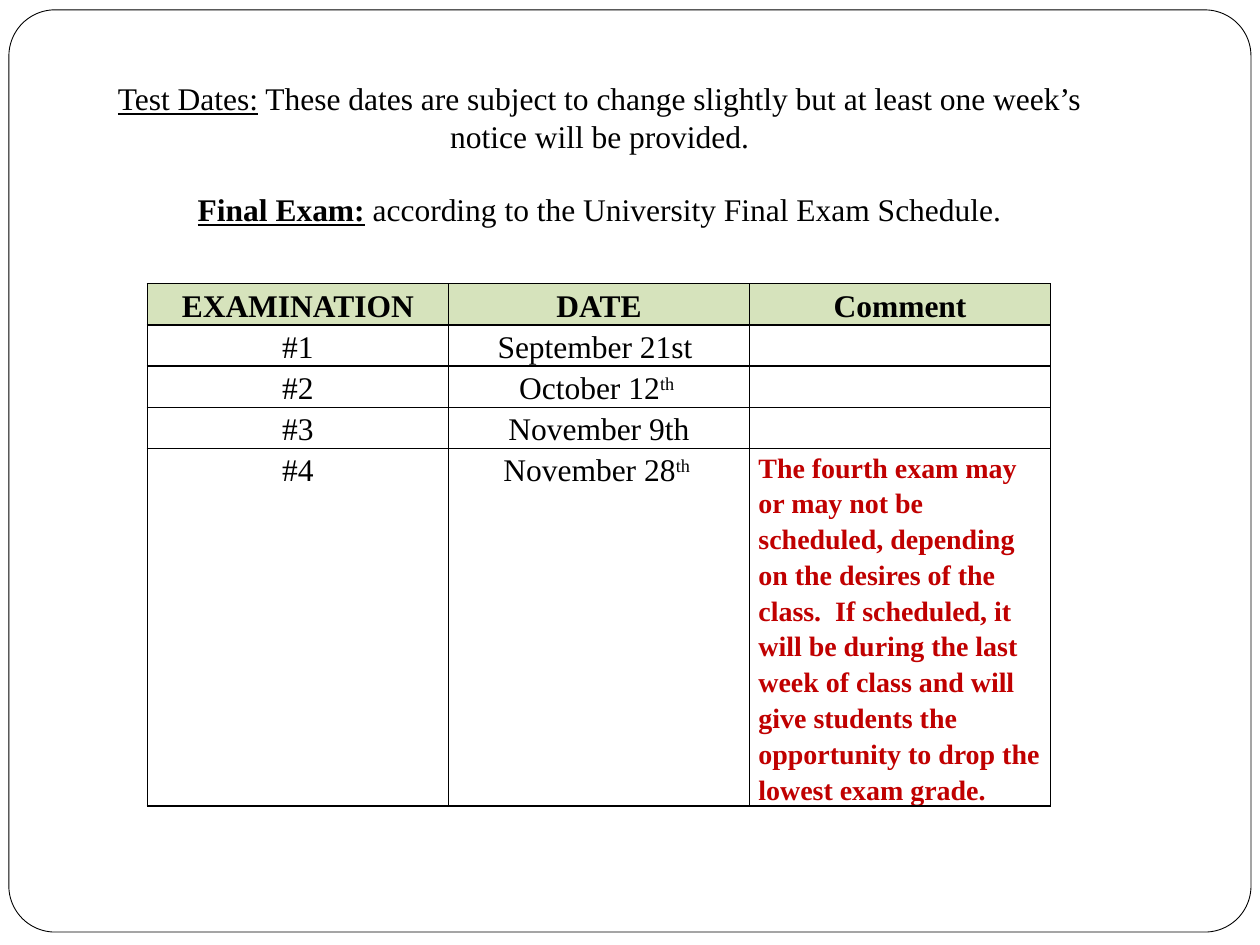
from lxml import etree
from pptx import Presentation
from pptx.dml.color import RGBColor
from pptx.enum import shapes, text
from pptx.oxml import ns
from pptx.util import Cm, Pt

# Content: each text is a list of (words, format) runs
PLAIN, BOLD = {}, {"bold": True}
SUPER = {"baseline": 30}
NOTICE = [
    [("Test Dates:", {"underline": True}),
     (" These dates are subject to change slightly but at least one week’s "
      "notice will be provided.", PLAIN)],
    [("Final Exam:", {"bold": True, "underline": True}),
     (" according to the University Final Exam Schedule.", PLAIN)],
]
COMMENT = ("The fourth exam may or may not be scheduled, depending on the desires "
           "of the class.  If scheduled, it will be during the last week of class "
           "and will give students the opportunity to drop the lowest exam grade.")
EXAMS = [
    [[("EXAMINATION", BOLD)], [("DATE", BOLD)], [("Comment", BOLD)]],
    [[("#1", PLAIN)], [("September 21st ", PLAIN)], []],
    [[("#2", PLAIN)], [("October 12", PLAIN), ("th ", SUPER)], []],
    [[("#3", PLAIN)], [("November 9th", PLAIN)], []],
    [[("#4", PLAIN)], [("November 28", PLAIN), ("th ", SUPER)],
     [(COMMENT, {"bold": True, "size": Pt(16), "color": "C00000"})]],
]

# Look and measures
BLACK, WHITE, HEADER_GREEN = "000000", "FFFFFF", "D6E3BC"
BASE = {"name": "Times New Roman", "size": Pt(18), "bold": False,
        "underline": False, "color": BLACK}
COLUMN_WIDTH = Cm(6.07)
ROW_HEIGHTS = [Cm(0.83)] * 4 + [Cm(4.85)]
CELL_FORMAT = {"margin_left": Cm(0.18), "margin_right": Cm(0.18),
               "margin_top": 0, "margin_bottom": 0}
CELL_PARAGRAPH = {"line_spacing": 1.15, "space_after": Pt(10)}


def rgb(value):
    return RGBColor.from_string(value)


def set_all(target, formats):
    for key, value in formats.items():
        setattr(target, key, value)


def add_runs(paragraph, runs):
    for words, changes in runs:
        run = paragraph.add_run()
        run.text = words
        formats = {**BASE, **changes}
        run.font.color.rgb = rgb(formats.pop("color"))
        baseline = formats.pop("baseline", 0)
        set_all(run.font, formats)
        if baseline:
            run._r.get_or_add_rPr().set("baseline", str(baseline * 1000))


def add_borders(cell):
    properties = cell._tc.get_or_add_tcPr()
    for side in ("lnL", "lnR", "lnT", "lnB"):
        line = etree.SubElement(properties, ns.qn("a:" + side), w=str(Pt(1)))
        fill = etree.SubElement(line, ns.qn("a:solidFill"))
        etree.SubElement(fill, ns.qn("a:srgbClr"), val=BLACK)


def add_frame(slide):
    frame = slide.shapes.add_shape(shapes.MSO_SHAPE.ROUNDED_RECTANGLE,
                                   Cm(0.18), Cm(0.2), Cm(25.04), Cm(18.59))
    frame.adjustments[0] = 0.05
    frame.shadow.inherit = False
    frame.fill.solid()
    frame.fill.fore_color.rgb = rgb(WHITE)
    frame.line.color.rgb = rgb(BLACK)
    frame.line.width = Pt(0.5)


def add_exams(slide):
    exams = slide.shapes.add_table(
        len(EXAMS), len(EXAMS[0]), Cm(2.97), Cm(5.72),
        COLUMN_WIDTH * len(EXAMS[0]), sum(ROW_HEIGHTS)).table
    set_all(exams, {"first_row": False, "horz_banding": False})
    for column in exams.columns:
        column.width = COLUMN_WIDTH
    for r, (row, height) in enumerate(zip(EXAMS, ROW_HEIGHTS)):
        exams.rows[r].height = height
        for c, runs in enumerate(row):
            cell = exams.cell(r, c)
            set_all(cell, CELL_FORMAT)
            add_borders(cell)
            if r == 0:
                cell.fill.solid()
                cell.fill.fore_color.rgb = rgb(HEADER_GREEN)
            else:
                cell.fill.background()
            paragraph = cell.text_frame.paragraphs[0]
            is_comment = r > 0 and c == 2
            paragraph.alignment = (text.PP_ALIGN.LEFT if is_comment
                                   else text.PP_ALIGN.CENTER)
            if runs:
                set_all(paragraph, CELL_PARAGRAPH)
                add_runs(paragraph, runs)


def add_notice(slide):
    notice = slide.shapes.add_textbox(Cm(2.11), Cm(1.47), Cm(19.96), Cm(3.25)).text_frame
    set_all(notice, {"word_wrap": True, "vertical_anchor": text.MSO_ANCHOR.MIDDLE})
    for i, runs in enumerate(NOTICE):
        paragraph = notice.add_paragraph() if i else notice.paragraphs[0]
        paragraph.alignment = text.PP_ALIGN.CENTER
        paragraph.space_before = Pt(20.5 * i)
        add_runs(paragraph, runs)


def main():
    deck = Presentation()
    set_all(deck, {"slide_width": Cm(25.4), "slide_height": Cm(19.05)})
    slide = deck.slides.add_slide(deck.slide_layouts[6])
    add_frame(slide)
    add_exams(slide)
    add_notice(slide)
    deck.save("out.pptx")


if __name__ == "__main__":
    main()
